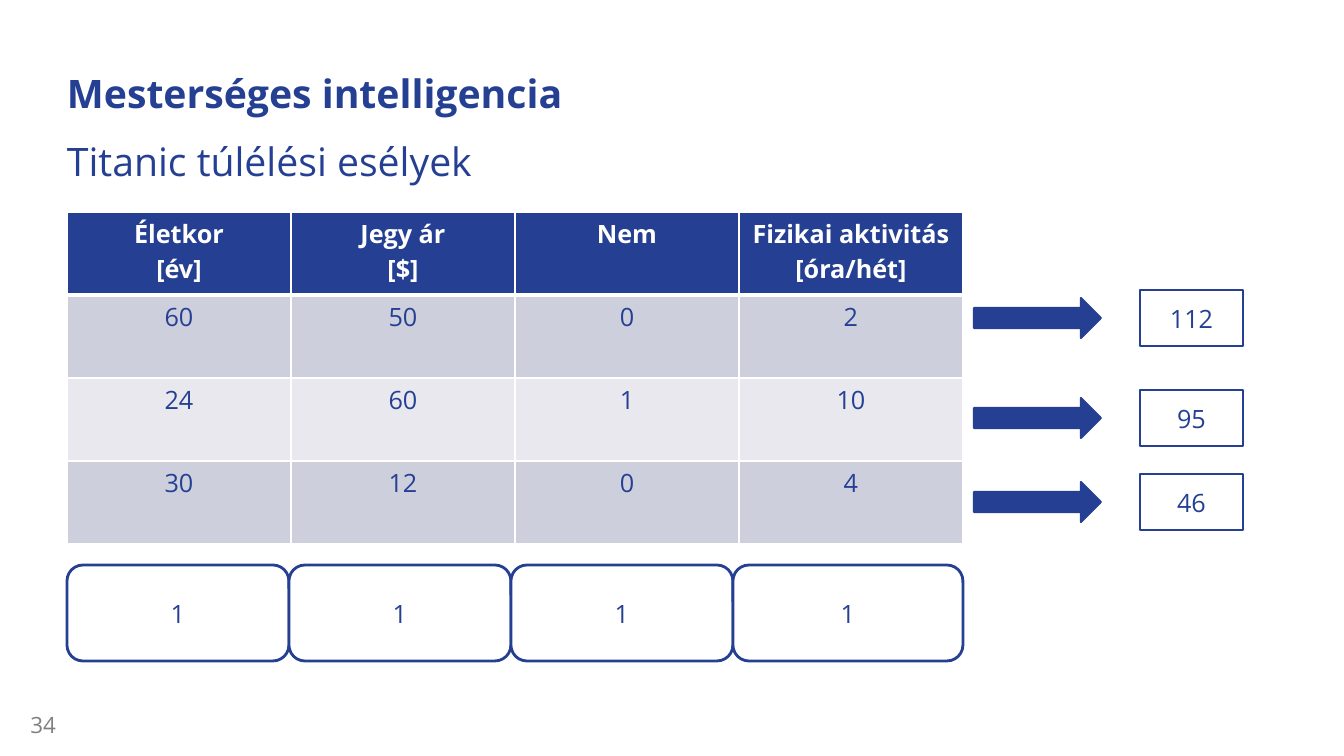
"""Builds the slide on survival odds: passenger table, weights and row sums."""
import pptx
import pptx.util
import pptx.dml.color
import pptx.enum.shapes
import pptx.enum.text
import pptx.oxml
import pptx.oxml.ns

TITLE = "Mesterséges intelligencia"
SUBTITLE = "Titanic túlélési esélyek"
PASSENGERS = [
    ["Életkor\n[év]", "Jegy ár\n[$]", "Nem", "Fizikai aktivitás\n[óra/hét]"],
    ["60", "50", "0", "2"],
    ["24", "60", "1", "10"],
    ["30", "12", "0", "4"],
]
WEIGHTS = ["1", "1", "1", "1"]
SUMS = [("112", 318), ("95", 418), ("46", 502)]
PAGE = "34"

COLORS = {"blue": "254093", "white": "FFFFFF", "gray": "808080",
          "dark band": "CDCFDC", "light band": "E8E8EE"}
FONT = "Open Sans"
PX = 914400 / 100.8
LEFT, TABLE_TOP, COLUMN, ROW = 67, 212, 224, 83
WEIGHT_TOP, WEIGHT_STEP, WEIGHT_HEIGHT = 565, 222, 96
ARROW_LEFT, ARROW_WIDTH, ARROW_HEIGHT = 974, 127, 40
SUM_LEFT, SUM_WIDTH, SUM_HEIGHT = 1140, 103, 56

SHAPES = pptx.enum.shapes.MSO_SHAPE
ALIGN = pptx.enum.text.PP_ALIGN
ANCHOR = pptx.enum.text.MSO_ANCHOR
NO_INSETS = {"margin_left": 0, "margin_top": 0, "margin_right": 0, "margin_bottom": 0}


def rgb(color):
    return pptx.dml.color.RGBColor.from_string(COLORS[color])


def px(*lengths):
    return [round(length * PX) for length in lengths]


def apply(target, values):
    for name, value in values.items():
        setattr(target, name, value)


def write(frame, text, color, size=18, bold=False, align=ALIGN.CENTER, spacing=None):
    frame.text = text
    for paragraph in frame.paragraphs:
        apply(paragraph, {"alignment": align, "line_spacing": spacing})
        for run in paragraph.runs:
            apply(run.font, {"name": FONT, "size": pptx.util.Pt(size), "bold": bold})
            run.font.color.rgb = rgb(color)


def add_box(slide, kind, place, fill, line_width, text=""):
    box = slide.shapes.add_shape(kind, *px(*place))
    box.shadow.inherit = False
    box.fill.solid()
    box.fill.fore_color.rgb = rgb(fill)
    box.line.color.rgb = rgb("blue")
    box.line.width = pptx.util.Pt(line_width)
    if text:
        box.text_frame.vertical_anchor = ANCHOR.MIDDLE
        write(box.text_frame, text, "blue")


def add_borders(cell, bottom):
    properties = cell._tc.get_or_add_tcPr()
    widths = {"lnL": 1, "lnR": 1, "lnT": 1, "lnB": bottom}
    for position, (side, width) in enumerate(widths.items()):
        border = pptx.oxml.parse_xml(
            f'<a:{side} {pptx.oxml.ns.nsdecls("a")} w="{pptx.util.Pt(width)}">'
            f'<a:solidFill><a:srgbClr val="{COLORS["white"]}"/></a:solidFill></a:{side}>')
        properties.insert(position, border)


def add_passengers(slide):
    rows, columns = len(PASSENGERS), len(PASSENGERS[0])
    place = px(LEFT, TABLE_TOP, COLUMN * columns, ROW * rows)
    table = slide.shapes.add_table(rows, columns, *place).table
    for r, values in enumerate(PASSENGERS):
        header = r == 0
        fill = "blue" if header else "dark band" if r % 2 else "light band"
        for c, value in enumerate(values):
            cell = table.cell(r, c)
            cell.fill.solid()
            cell.fill.fore_color.rgb = rgb(fill)
            write(cell.text_frame, value, "white" if header else "blue", bold=header)
            add_borders(cell, 3 if header else 1)


def main():
    deck = pptx.Presentation()
    deck.slide_width, deck.slide_height = px(1344, 756)
    slide = deck.slides.add_slide(deck.slide_layouts[5])

    title = slide.shapes.title
    apply(title, dict(zip(("left", "top", "width", "height"), px(LEFT, 33, 1052, 84))))
    apply(title.text_frame, NO_INSETS | {"vertical_anchor": ANCHOR.BOTTOM, "word_wrap": True})
    write(title.text_frame, TITLE, "blue", 28, True, ALIGN.LEFT, 0.9)

    subtitle = slide.shapes.add_textbox(*px(LEFT, 143, 586, 50)).text_frame
    apply(subtitle, NO_INSETS | {"word_wrap": True})
    write(subtitle, SUBTITLE, "blue", 28, align=ALIGN.LEFT, spacing=0.9)

    add_passengers(slide)

    for i, weight in enumerate(WEIGHTS):
        left = LEFT + i * WEIGHT_STEP
        right = LEFT + COLUMN * len(WEIGHTS) if i == len(WEIGHTS) - 1 else left + WEIGHT_STEP
        add_box(slide, SHAPES.ROUNDED_RECTANGLE,
                (left, WEIGHT_TOP, right - left, WEIGHT_HEIGHT), "white", 2, weight)

    for total, middle in SUMS:
        add_box(slide, SHAPES.RIGHT_ARROW,
                (ARROW_LEFT, middle - ARROW_HEIGHT / 2, ARROW_WIDTH, ARROW_HEIGHT), "blue", 1.5)
        add_box(slide, SHAPES.RECTANGLE,
                (SUM_LEFT, middle - SUM_HEIGHT / 2, SUM_WIDTH, SUM_HEIGHT), "white", 2, total)

    page = slide.shapes.add_textbox(*px(23, 714, 33, 24)).text_frame
    apply(page, NO_INSETS | {"vertical_anchor": ANCHOR.BOTTOM, "word_wrap": False})
    write(page, PAGE, "gray", 16, align=ALIGN.RIGHT)

    deck.save("out.pptx")


if __name__ == "__main__":
    main()
